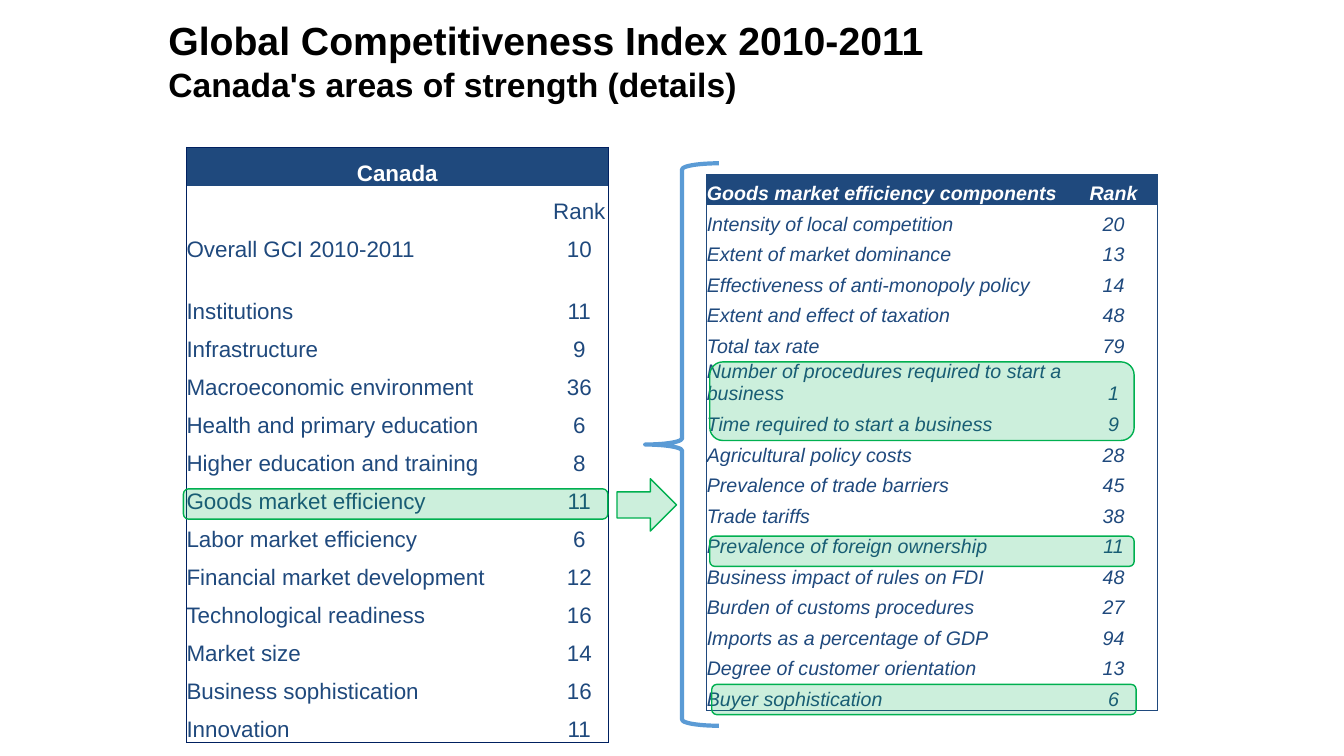
from dataclasses import dataclass

from lxml.etree import SubElement
from pptx import Presentation
from pptx.dml.color import RGBColor
from pptx.enum.shapes import MSO_SHAPE
from pptx.enum.text import MSO_ANCHOR, MSO_AUTO_SIZE, PP_ALIGN
from pptx.oxml import parse_xml
from pptx.oxml.ns import nsdecls, qn
from pptx.util import Inches, Pt


@dataclass(frozen=True)
class Theme:
    font: str = "Arial"
    black: str = "000000"
    white: str = "FFFFFF"
    blue: str = "1F497D"
    navy: str = "002060"
    green: str = "00B050"
    brace: str = "5B9BD5"
    title: int = 28
    subtitle: int = 24
    ranking: int = 16
    component: int = 14
    spacer: int = 12


THEME = Theme()
SLIDE_WIDTH = Inches(13.33)
SLIDE_HEIGHT = Inches(7.5)
PLAIN_TABLE_STYLE = "{2D5ABB26-0587-4C30-8999-92F81FD0307C}"

RANKINGS = [
    ("Canada", ""),
    ("", "Rank"),
    ("Overall GCI 2010-2011", "10"),
    ("", ""),
    ("Institutions", "11"),
    ("Infrastructure", "9"),
    ("Macroeconomic environment", "36"),
    ("Health and primary education", "6"),
    ("Higher education and training", "8"),
    ("Goods market efficiency", "11"),
    ("Labor market efficiency", "6"),
    ("Financial market development", "12"),
    ("Technological readiness", "16"),
    ("Market size", "14"),
    ("Business sophistication", "16"),
    ("Innovation", "11"),
]
COMPONENTS = [
    ("Goods market efficiency components", "Rank"),
    ("Intensity of local competition", "20"),
    ("Extent of market dominance", "13"),
    ("Effectiveness of anti-monopoly policy", "14"),
    ("Extent and effect of taxation", "48"),
    ("Total tax rate", "79"),
    ("Number of procedures required to start a business", "1"),
    ("Time required to start a business", "9"),
    ("Agricultural policy costs", "28"),
    ("Prevalence of trade barriers", "45"),
    ("Trade tariffs", "38"),
    ("Prevalence of foreign ownership", "11"),
    ("Business impact of rules on FDI", "48"),
    ("Burden of customs procedures", "27"),
    ("Imports as a percentage of GDP", "94"),
    ("Degree of customer orientation", "13"),
    ("Buyer sophistication", "6"),
    ("", ""),
]
HIGHLIGHTS = [
    (13.65, 64.67, 31.58, 4),
    (52.81, 47.87, 31.58, 10.4),
    (52.81, 70.93, 31.58, 4),
    (52.96, 90.53, 31.58, 4),
]


def place(left, top, width, height):
    horizontal, vertical = SLIDE_WIDTH / 100, SLIDE_HEIGHT / 100
    return (int(left * horizontal), int(top * vertical),
            int(width * horizontal), int(height * vertical))


def write_text(paragraph, text, *, size, color, bold=False, italic=False,
               align=PP_ALIGN.LEFT):
    paragraph.alignment = align
    run = paragraph.add_run()
    run.text = text
    font = run.font
    font.name, font.size = THEME.font, Pt(size)
    font.bold, font.italic = bold, italic
    font.color.rgb = RGBColor.from_string(color)


def clear_insets(target):
    target.margin_left = target.margin_right = 0
    target.margin_top = target.margin_bottom = 0
    target.vertical_anchor = MSO_ANCHOR.BOTTOM


def draw_borders(cell, sides, color):
    properties = cell._tc.get_or_add_tcPr()
    for index, side in enumerate(sides):
        properties.insert(index, parse_xml(
            f'<a:ln{side} {nsdecls("a")} w="6350"><a:solidFill>'
            f'<a:srgbClr val="{color}"/></a:solidFill></a:ln{side}>'))


def fill_cell(cell, text, *, fill, **text_format):
    clear_insets(cell)
    if fill:
        cell.fill.solid()
        cell.fill.fore_color.rgb = RGBColor.from_string(fill)
    paragraph = cell.text_frame.paragraphs[0]
    if text:
        write_text(paragraph, text, **text_format)
    else:
        end = SubElement(paragraph._p, qn("a:endParaRPr"))
        end.set("sz", str(THEME.spacer * 100))


def add_rank_table(slide, rows, area, *, column_weights, row_weights, size,
                   border, italic=False, title_row=False, unframed_rows=0):
    left, top, width, height = place(*area)
    table = slide.shapes.add_table(len(rows), 2, left, top, width, height).table
    table.first_row = table.horz_banding = False
    table._tbl.tblPr.find(qn("a:tableStyleId")).text = PLAIN_TABLE_STYLE
    for column, weight in zip(table.columns, column_weights):
        column.width = int(width * weight / sum(column_weights))
    weights = [row_weights.get(index, 1) for index in range(len(rows))]
    for row, weight in zip(table.rows, weights):
        row.height = int(height * weight / sum(weights))
    if title_row:
        table.cell(0, 0).merge(table.cell(0, 1))

    last_framed = len(rows) - unframed_rows - 1
    for row_index, values in enumerate(rows):
        header, framed = row_index == 0, row_index <= last_framed
        for column_index, text in enumerate(values):
            cell = table.cell(row_index, column_index)
            centered = column_index == 1 or cell.is_merge_origin
            fill = THEME.blue if header else THEME.white
            fill_cell(cell, text, fill=fill if framed else None, size=size,
                      color=THEME.white if header else THEME.blue,
                      bold=header, italic=italic,
                      align=PP_ALIGN.CENTER if centered else PP_ALIGN.LEFT)
            if framed:
                edges = {"L": column_index == 0, "R": centered,
                         "T": header, "B": row_index == last_framed}
                draw_borders(cell, [side for side, on in edges.items() if on], border)


def add_outline(slide, preset, area, *, color, weight):
    shape = slide.shapes.add_shape(preset, *place(*area))
    shape.shadow.inherit = False
    shape.fill.background()
    shape.line.color.rgb = RGBColor.from_string(color)
    shape.line.width = Pt(weight)
    return shape


def add_highlight(slide, preset, area):
    shape = add_outline(slide, preset, area, color=THEME.green, weight=1)
    shape.fill.solid()
    shape.fill.fore_color.rgb = RGBColor.from_string(THEME.green)
    color = shape._element.spPr.find(qn("a:solidFill"))[0]
    SubElement(color, qn("a:alpha")).set("val", "20000")


def add_title(slide, area, heading, subheading):
    title = slide.shapes.title
    title.left, title.top, title.width, title.height = place(*area)
    frame = title.text_frame
    frame.word_wrap = True
    frame.auto_size = MSO_AUTO_SIZE.NONE
    clear_insets(frame)
    paragraph = frame.paragraphs[0]
    write_text(paragraph, heading, size=THEME.title, color=THEME.black, bold=True)
    paragraph.add_line_break()
    write_text(paragraph, subheading, size=THEME.subtitle, color=THEME.black, bold=True)


def main():
    presentation = Presentation()
    presentation.slide_width, presentation.slide_height = SLIDE_WIDTH, SLIDE_HEIGHT
    slide = presentation.slides.add_slide(presentation.slide_layouts[5])
    add_title(slide, (12.53, 0.13, 73.52, 13.6),
              "Global Competitiveness Index 2010-2011",
              "Canada's areas of strength (details)")
    add_rank_table(slide, RANKINGS, (13.88, 19.47, 31.36, 78.8),
                   column_weights=(3.61, 0.57), row_weights={0: 1.03, 3: 0.63},
                   size=THEME.ranking, border=THEME.navy, title_row=True)
    add_outline(slide, MSO_SHAPE.LEFT_BRACE, (48.01, 21.6, 5.48, 74.4),
                color=THEME.brace, weight=3)
    add_rank_table(slide, COMPONENTS, (52.59, 23.07, 33.53, 75.07),
                   column_weights=(3.6, 0.87), row_weights={6: 1.55},
                   size=THEME.component, border=THEME.blue, italic=True,
                   unframed_rows=1)
    add_highlight(slide, MSO_SHAPE.RIGHT_ARROW, (45.91, 63.33, 4.43, 6.93))
    for area in HIGHLIGHTS:
        add_highlight(slide, MSO_SHAPE.ROUNDED_RECTANGLE, area)
    presentation.save("out.pptx")


if __name__ == "__main__":
    main()
